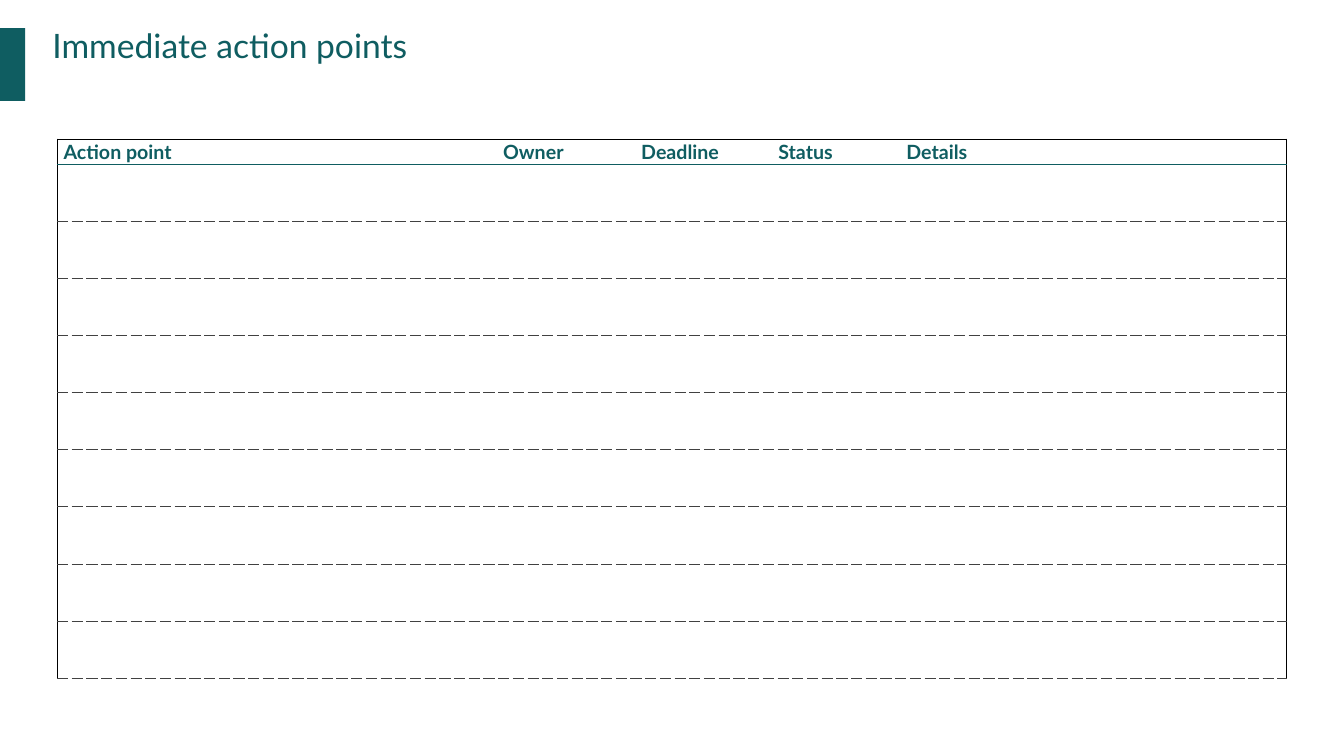
from lxml import etree
from pptx import Presentation
from pptx.dml.color import RGBColor
from pptx.enum.shapes import MSO_SHAPE
from pptx.enum.text import MSO_ANCHOR
from pptx.oxml.ns import qn
from pptx.util import Inches, Pt

RECT = MSO_SHAPE.RECTANGLE
MIDDLE = MSO_ANCHOR.MIDDLE
TEAL = "0F5D61"
FONT = "Lato"
HEADERS = ["Action point", "Owner", "Deadline", "Status", "Details"]
COL_WIDTHS = [4.36, 1.37, 1.36, 1.27, 3.83]
ACTION_ROWS = 9
HEADER_H = 0.25
TABLE_H = 5.35
OUTER = ("000000", 0.75, "solid")
HEADER_RULE = (TEAL, 1, "solid")
ROW_RULE = ("414141", 0.75, "dash")


def rgb(color):
    """Turn a hex string into a colour."""
    return RGBColor.from_string(color)


def write(tf, text, size=14, color=TEAL, bold=False):
    """Write one formatted run into a text frame."""
    r = tf.paragraphs[0].add_run()
    r.text = text
    r.font.name = FONT
    r.font.size = Pt(size)
    r.font.bold = bold
    r.font.color.rgb = rgb(color)


def set_margins(target, left=0, top=0, right=0, bottom=0):
    """Set the inner margins of a text frame or cell in inches."""
    target.margin_left, target.margin_top = Inches(left), Inches(top)
    target.margin_right, target.margin_bottom = Inches(right), Inches(bottom)


def set_borders(cell, **sides):
    """Draw the given sides of a cell and clear the others."""
    tc_pr = cell._tc.get_or_add_tcPr()
    for side in ("L", "R", "T", "B"):
        ln = etree.SubElement(tc_pr, qn(f"a:ln{side}"))
        rule = sides.get(side)
        if rule is None:
            etree.SubElement(ln, qn("a:noFill"))
            continue
        color, width, dash = rule
        ln.set("w", str(Pt(width)))
        fill = etree.SubElement(ln, qn("a:solidFill"))
        etree.SubElement(fill, qn("a:srgbClr"), val=color)
        etree.SubElement(ln, qn("a:prstDash"), val=dash)


def add_accent(s):
    """Add the teal bar at the left edge."""
    sp = s.shapes.add_shape(RECT, Inches(-0.01), Inches(0.28), Inches(0.26), Inches(0.72))
    sp.shadow.inherit = False
    sp.fill.solid()
    sp.fill.fore_color.rgb = rgb(TEAL)
    sp.line.fill.background()


def add_title(s, text):
    """Add the slide title."""
    sp = s.shapes.add_textbox(Inches(0.52), Inches(0.25), Inches(12.55), Inches(0.8))
    tf = sp.text_frame
    tf.word_wrap = True
    set_margins(tf)
    write(tf, text, size=24)


def add_action_table(s):
    """Add the table with its header and empty action rows."""
    last_col = len(HEADERS) - 1
    table = s.shapes.add_table(
        ACTION_ROWS + 1, len(HEADERS), Inches(0.57), Inches(1.38),
        Inches(sum(COL_WIDTHS)), Inches(TABLE_H)).table
    table.first_row = table.horz_banding = False
    for col, width in zip(table.columns, COL_WIDTHS):
        col.width = Inches(width)
    for i, row in enumerate(table.rows):
        row.height = Inches((TABLE_H - HEADER_H) / ACTION_ROWS if i else HEADER_H)
        top = OUTER if i == 0 else HEADER_RULE if i == 1 else ROW_RULE
        for j, cell in enumerate(row.cells):
            set_borders(cell, T=top, B=ROW_RULE if i else HEADER_RULE,
                        L=OUTER if j == 0 else None,
                        R=OUTER if j == last_col else None)
            cell.fill.background()
    for cell, text in zip(table.rows[0].cells, HEADERS):
        cell.vertical_anchor = MIDDLE
        set_margins(cell, left=0.06, top=0.01, right=0.06)
        write(cell.text_frame, text, bold=True)


def main():
    """Build and save the slide."""
    prs = Presentation()
    prs.slide_width, prs.slide_height = Inches(13.33), Inches(7.5)
    s = prs.slides.add_slide(prs.slide_layouts[6])
    add_action_table(s)
    add_accent(s)
    add_title(s, "Immediate action points")
    prs.save("out.pptx")


if __name__ == "__main__":
    main()
